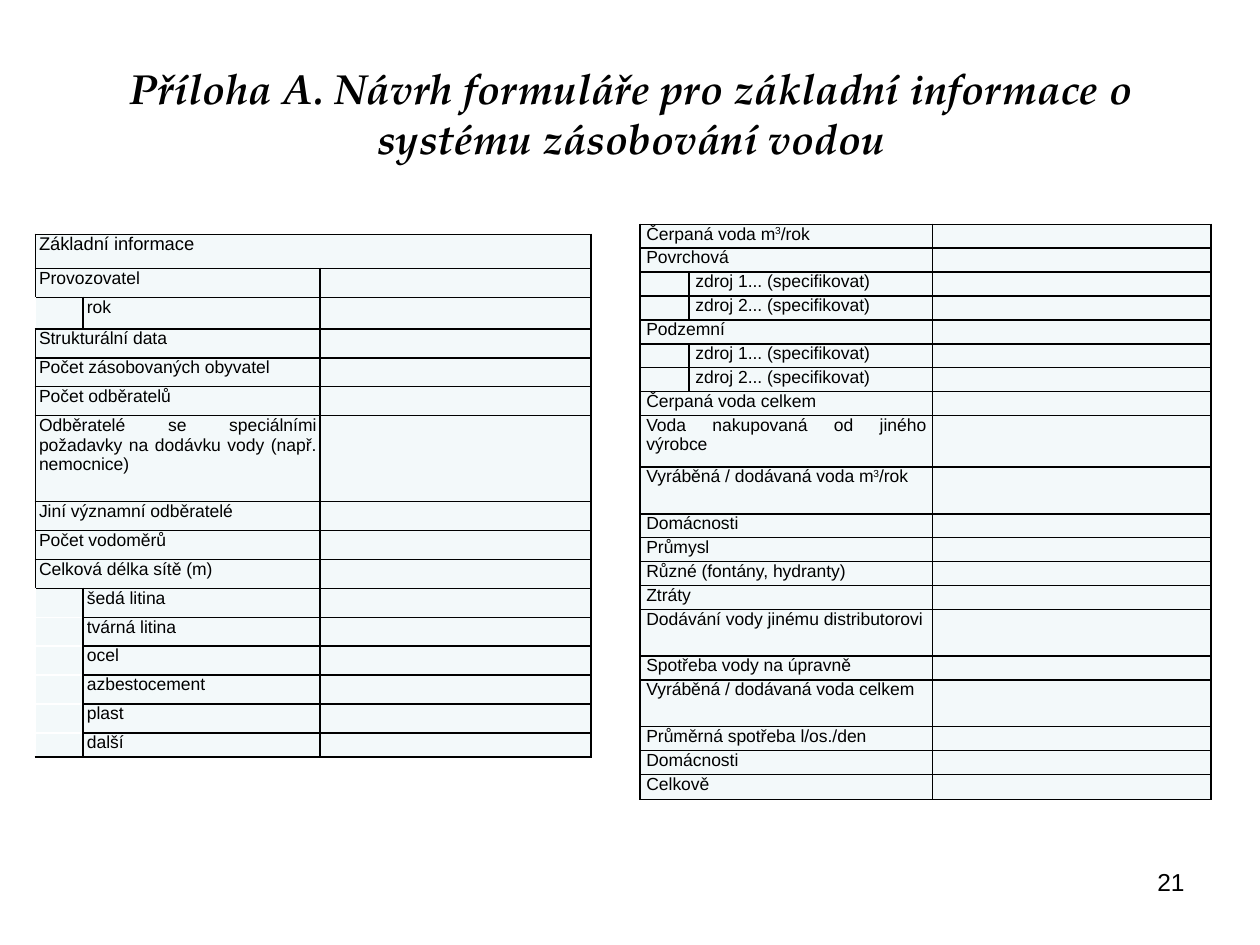
from dataclasses import dataclass

from lxml import etree
from pptx import Presentation
from pptx import util as u
from pptx.dml.color import RGBColor
from pptx.enum import text
from pptx.oxml.ns import qn


@dataclass(frozen=True)
class Theme:
    ink: str = "000000"
    cell: str = "F3F9FA"
    hidden: str = "FFFFFF"
    title_font: str = "TeX Gyre Pagella"
    body_font: str = "Arial"
    title_size: float = 24
    number_size: float = 14
    heading_size: float = 10.5
    body_size: float = 10
    line: float = 1


THEME = Theme()
TITLE = "Příloha A. Návrh formuláře pro základní informace o systému zásobování vodou"
PAGE_NUMBER = "21"
FULL, LABEL, INDENTED = "full", "label", "indented"

# Rows are (text, kind, height in inches); ^ encloses a superscript.
STEP = 0.23
SYSTEM_ROWS = [
    ("Základní informace", FULL, 0.27),
    ("Provozovatel", LABEL, STEP),
    ("rok", INDENTED, 0.25),
    ("Strukturální data", LABEL, STEP),
    ("Počet zásobovaných obyvatel", LABEL, STEP),
    ("Počet odběratelů", LABEL, STEP),
    ("Odběratelé se speciálními požadavky na dodávku vody (např. nemocnice)", LABEL, 0.68),
    ("Jiní významní odběratelé", LABEL, STEP),
    ("Počet vodoměrů", LABEL, STEP),
    ("Celková délka sítě (m)", LABEL, STEP),
    ("šedá litina", INDENTED, STEP),
    ("tvárná litina", INDENTED, STEP),
    ("ocel", INDENTED, STEP),
    ("azbestocement", INDENTED, STEP),
    ("plast", INDENTED, STEP),
    ("další", INDENTED, 0.19),
]
LOW, HIGH = 0.19, 0.37
WATER_ROWS = [
    ("Čerpaná voda m^3^/rok", LABEL, LOW),
    ("Povrchová", LABEL, LOW),
    ("zdroj 1... (specifikovat)", INDENTED, LOW),
    ("zdroj 2... (specifikovat)", INDENTED, LOW),
    ("Podzemní", LABEL, LOW),
    ("zdroj 1... (specifikovat)", INDENTED, LOW),
    ("zdroj 2... (specifikovat)", INDENTED, LOW),
    ("Čerpaná voda celkem", LABEL, LOW),
    ("Voda nakupovaná od jiného výrobce", LABEL, 0.41),
    ("Vyráběná / dodávaná voda m^3^/rok", LABEL, HIGH),
    ("Domácnosti", LABEL, LOW),
    ("Průmysl", LABEL, LOW),
    ("Různé (fontány, hydranty)", LABEL, LOW),
    ("Ztráty", LABEL, LOW),
    ("Dodávání vody jinému distributorovi", LABEL, HIGH),
    ("Spotřeba vody na úpravně", LABEL, LOW),
    ("Vyráběná / dodávaná voda celkem", LABEL, HIGH),
    ("Průměrná spotřeba l/os./den", LABEL, LOW),
    ("Domácnosti", LABEL, LOW),
    ("Celkově", LABEL, 0.2),
]
FORMS = [
    dict(rows=SYSTEM_ROWS, left=0.28, top=1.86, columns=(0.38, 1.88, 2.15),
         inset=0.03, open_indent=True),
    dict(rows=WATER_ROWS, left=5.08, top=1.78, columns=(0.39, 1.93, 2.21),
         inset=0.05, open_indent=False),
]


def style(paragraph, font_name, size, alignment):
    paragraph.alignment = alignment
    paragraph.font.name = font_name
    paragraph.font.size = u.Pt(size)
    paragraph.font.color.rgb = RGBColor.from_string(THEME.ink)


def place(shape, left, top, width, height):
    shape.left, shape.top = u.Inches(left), u.Inches(top)
    shape.width, shape.height = u.Inches(width), u.Inches(height)


def set_borders(cell, hidden_sides):
    properties = cell._tc.get_or_add_tcPr()
    for side in "LRTB":
        line = etree.SubElement(properties, qn(f"a:ln{side}"), w=str(u.Pt(THEME.line)))
        fill = etree.SubElement(line, qn("a:solidFill"))
        color = THEME.hidden if side in hidden_sides else THEME.ink
        etree.SubElement(fill, qn("a:srgbClr"), val=color)


def format_cell(cell, inset, hidden_sides):
    set_borders(cell, hidden_sides)
    cell.fill.solid()
    cell.fill.fore_color.rgb = RGBColor.from_string(THEME.cell)
    cell.margin_left = cell.margin_right = u.Inches(inset)
    cell.margin_top = cell.margin_bottom = 0
    # An empty cell takes its minimum height from the end-of-paragraph size.
    etree.SubElement(cell.text_frame.paragraphs[0]._p, qn("a:endParaRPr"),
                     sz=str(THEME.body_size * 100))


def write_label(cell, label, size):
    paragraph = cell.text_frame.paragraphs[0]
    for index, part in enumerate(label.split("^")):
        run = paragraph.add_run()
        run.text = part
        if index % 2:
            run._r.get_or_add_rPr().set("baseline", "30000")
    style(paragraph, THEME.body_font, size, text.PP_ALIGN.JUSTIFY)


def hidden_sides_of(rows, index):
    """Sides of an open indent cell that are drawn in the background colour."""
    def indented(position):
        return 0 <= position < len(rows) and rows[position][1] == INDENTED
    if not indented(index):
        return ""
    return "L" + "T" * indented(index - 1) + "B" * indented(index + 1)


def add_form(slide, rows, left, top, columns, inset, open_indent):
    height = sum(row[2] for row in rows)
    frame = slide.shapes.add_table(len(rows), len(columns), u.Inches(left), u.Inches(top),
                                   u.Inches(sum(columns)), u.Inches(height))
    table = frame.table
    table.first_row = table.horz_banding = False
    for column, width in zip(table.columns, columns):
        column.width = u.Inches(width)
    for index, (label, kind, row_height) in enumerate(rows):
        table.rows[index].height = u.Inches(row_height)
        for number in range(len(columns)):
            hidden = hidden_sides_of(rows, index) if open_indent and number == 0 else ""
            format_cell(table.cell(index, number), inset, hidden)
        first = table.cell(index, 0)
        if kind != INDENTED:
            first.merge(table.cell(index, 2 if kind == FULL else 1))
        size = THEME.heading_size if kind == FULL else THEME.body_size
        write_label(table.cell(index, 1) if kind == INDENTED else first, label, size)


def add_title(slide):
    title = slide.shapes.title
    place(title, 0.51, 0.27, 9, 1.25)
    frame = title.text_frame
    frame.text = TITLE
    frame.auto_size = text.MSO_AUTO_SIZE.NONE
    frame.vertical_anchor = text.MSO_ANCHOR.MIDDLE
    paragraph = frame.paragraphs[0]
    style(paragraph, THEME.title_font, THEME.title_size, text.PP_ALIGN.CENTER)
    paragraph.font.bold = paragraph.font.italic = True


def add_page_number(slide):
    box = slide.shapes.add_textbox(0, 0, 0, 0)
    place(box, 7.17, 6.83, 2.33, 0.52)
    box.text_frame.word_wrap = True
    box.text_frame.text = PAGE_NUMBER
    style(box.text_frame.paragraphs[0], THEME.body_font, THEME.number_size,
          text.PP_ALIGN.RIGHT)


def main():
    presentation = Presentation()
    presentation.slide_width, presentation.slide_height = u.Inches(10), u.Inches(7.5)
    slide = presentation.slides.add_slide(presentation.slide_layouts[5])
    add_title(slide)
    for form in FORMS:
        add_form(slide, **form)
    add_page_number(slide)
    presentation.save("out.pptx")


if __name__ == "__main__":
    main()
